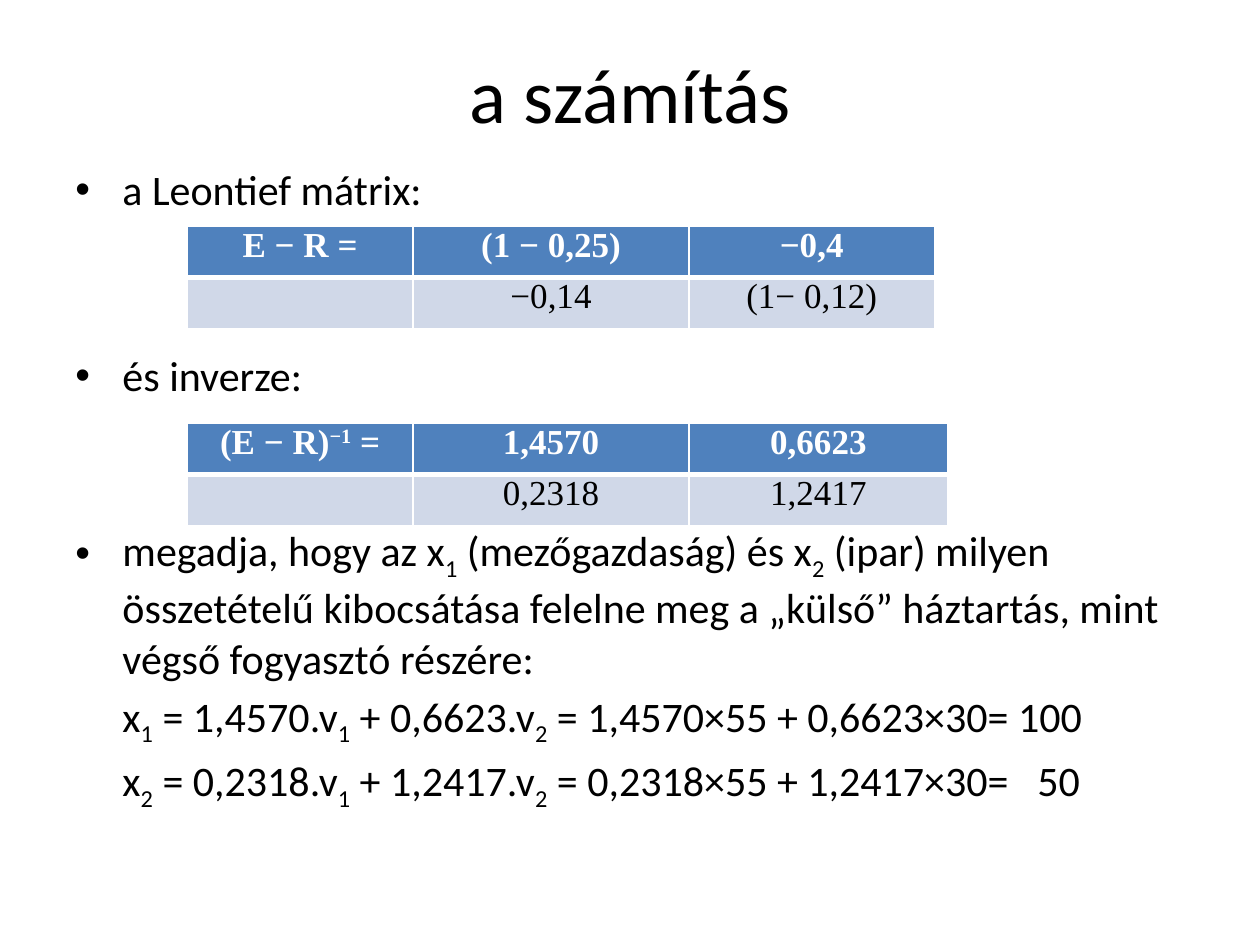
from dataclasses import dataclass

import pptx
import pptx.dml.color
import pptx.enum.text
import pptx.oxml.ns
import pptx.util
from lxml import etree
from pptx.util import Cm, Pt

RGBColor = pptx.dml.color.RGBColor
ALIGN = pptx.enum.text.PP_ALIGN
ANCHOR = pptx.enum.text.MSO_ANCHOR
qn = pptx.oxml.ns.qn

BLACK = RGBColor(0x00, 0x00, 0x00)
WHITE = RGBColor(0xFF, 0xFF, 0xFF)
HEADER_BLUE = RGBColor(0x4F, 0x81, 0xBD)
ROW_BLUE = RGBColor(0xD0, 0xD8, 0xE8)

HANGING = Cm(0.95)
WIDE_SPACE = 1080  # hundredths of a point added to one space


@dataclass
class Item:
    text: str  # pieces between ~ marks are subscripts
    space_before: float
    bullet: bool = True


@dataclass
class Matrix:
    top: float
    last_width: float
    rows: list[list[str]]  # pieces between ~ marks are superscripts


ITEMS = [
    Item("a Leontief mátrix:", 0),
    Item("és inverze:", 77.5),
    Item("megadja, hogy az x~1~ (mezőgazdaság) és x~2~ (ipar) milyen összetételű "
         "kibocsátása felelne meg a „külső” háztartás, mint végső fogyasztó részére:", 71),
    Item("x~1~ = 1,4570.v~1~ + 0,6623.v~2~ = 1,4570×55 + 0,6623×30= 100", 4.2, False),
    Item("x~2~ = 0,2318.v~1~ + 1,2417.v~2~ = 0,2318×55 + 1,2417×30=~ ~50", 4.2, False),
]

MATRICES = [
    Matrix(4.56, 4.95, [["E − R =", "(1 − 0,25)", "−0,4"], ["", "−0,14", "(1− 0,12)"]]),
    Matrix(8.53, 5.22, [["(E − R)~−1~ =", "1,4570", "0,6623"], ["", "0,2318", "1,2417"]]),
]


def write(para, text: str, *, size: float, font: str = "Calibri", color: RGBColor = BLACK,
          bold: bool = False, align=ALIGN.LEFT, shift: int = -25) -> None:
    """Write text; pieces between ~ marks are shifted, a marked space is widened."""
    para.alignment = align
    para.font.size = Pt(size)
    for index, piece in enumerate(text.split("~")):
        if not piece:
            continue
        span = para.add_run()
        span.text = piece
        span.font.size = Pt(size)
        span.font.name = font
        span.font.bold = bold
        span.font.color.rgb = color
        if index % 2:
            properties = span.font._element
            if piece == " ":
                properties.set("spc", str(WIDE_SPACE))
            else:
                properties.set("baseline", str(shift * 1000))


def add_box(page, left: float, top: float, width: float, height: float, anchor):
    box = page.shapes.add_textbox(Cm(left), Cm(top), Cm(width), Cm(height))
    box.text_frame.word_wrap = True
    box.text_frame.vertical_anchor = anchor
    return box.text_frame


def add_item(para, item: Item) -> None:
    write(para, item.text, size=24)
    para.space_before = Pt(item.space_before)
    properties = para._p.get_or_add_pPr()
    properties.set("marL", str(HANGING))
    properties.set("indent", str(-HANGING if item.bullet else 0))
    if item.bullet:
        etree.SubElement(properties, qn("a:buFont")).set("typeface", "Arial")
        etree.SubElement(properties, qn("a:buChar")).set("char", "•")
    else:
        etree.SubElement(properties, qn("a:buNone"))


def add_borders(cell, thick_side: str) -> None:
    properties = cell._tc.get_or_add_tcPr()
    for side in ("lnL", "lnR", "lnT", "lnB"):
        line = etree.SubElement(properties, qn(f"a:{side}"))
        line.set("w", str(Pt(3 if side == thick_side else 1)))
        fill = etree.SubElement(line, qn("a:solidFill"))
        etree.SubElement(fill, qn("a:srgbClr")).set("val", str(WHITE))


def add_matrix(page, matrix: Matrix) -> None:
    widths = [4.56, 5.56, matrix.last_width]
    row_height = 1.03
    table = page.shapes.add_table(len(matrix.rows), len(widths), Cm(3.77), Cm(matrix.top),
                                  Cm(sum(widths)), Cm(row_height * len(matrix.rows))).table
    for column, width in zip(table.columns, widths):
        column.width = Cm(width)
    for row_index, texts in enumerate(matrix.rows):
        table.rows[row_index].height = Cm(row_height)
        header = row_index == 0
        for column_index, text in enumerate(texts):
            cell = table.cell(row_index, column_index)
            cell.margin_left = cell.margin_right = Cm(0.13)
            cell.margin_top = cell.margin_bottom = 0
            add_borders(cell, "lnB" if header else "lnT")
            cell.fill.solid()
            cell.fill.fore_color.rgb = HEADER_BLUE if header else ROW_BLUE
            write(cell.text_frame.paragraphs[0], text, size=20, font="Times New Roman",
                  color=WHITE if header else BLACK, bold=header, align=ALIGN.CENTER, shift=30)


def main() -> None:
    deck = pptx.Presentation()
    deck.slide_width, deck.slide_height = Cm(25.4), Cm(19.05)
    page = deck.slides.add_slide(deck.slide_layouts[6])

    # Title
    title = add_box(page, 1.27, 0.76, 22.86, 2.21, ANCHOR.MIDDLE)
    write(title.paragraphs[0], "a számítás", size=44, align=ALIGN.CENTER)

    # Explanation, with room left for the matrices
    body = add_box(page, 1.27, 3.18, 22.86, 13.84, ANCHOR.TOP)
    for index, item in enumerate(ITEMS):
        add_item(body.add_paragraph() if index else body.paragraphs[0], item)

    # Leontief matrix and its inverse
    for matrix in MATRICES:
        add_matrix(page, matrix)

    deck.save("out.pptx")


if __name__ == "__main__":
    main()
